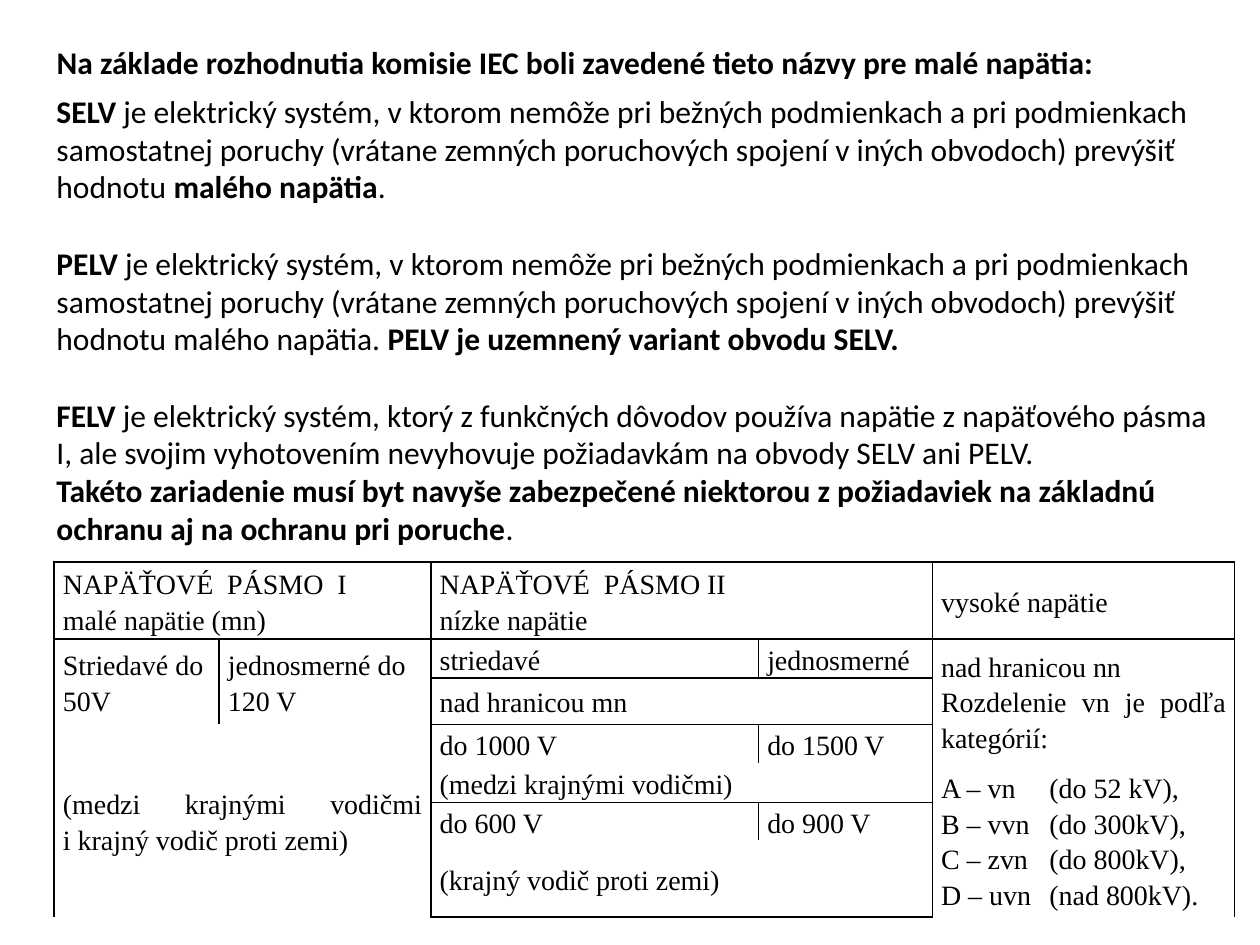
from dataclasses import dataclass

from lxml import etree
from pptx import Presentation
from pptx.dml.color import RGBColor
from pptx.enum.text import MSO_ANCHOR, MSO_AUTO_SIZE, PP_ALIGN
from pptx.oxml.ns import qn
from pptx.util import Inches, Pt

TOP, MIDDLE = MSO_ANCHOR.TOP, MSO_ANCHOR.MIDDLE
LEFT, JUSTIFY = PP_ALIGN.LEFT, PP_ALIGN.JUSTIFY
NO_FIT = MSO_AUTO_SIZE.NONE
TITLE_ONLY = 5


@dataclass(frozen=True)
class Theme:
    ink: str = "000000"
    body_font: str = "Calibri"
    table_font: str = "Times New Roman"
    body_size: int = 18
    table_size: int = 16
    border: int = 1


THEME = Theme()

HEADING = "Na základe rozhodnutia komisie IEC boli zavedené tieto názvy pre malé napätia:"
SHARED = (
    "je elektrický systém, v ktorom nemôže pri bežných podmienkach a pri podmienkach "
    "samostatnej poruchy (vrátane zemných poruchových spojení v iných obvodoch) prevýšiť hodnotu "
)
DEFINITIONS = [
    (0, [("SELV ", True), (SHARED, False), ("malého napätia", True), (".", False)]),
    (22, [("PELV ", True), (SHARED + "malého napätia. ", False),
          ("PELV je uzemnený variant obvodu SELV.", True)]),
    (22, [("FELV ", True),
          ("je elektrický systém, ktorý z funkčných dôvodov používa napätie z napäťového pásma I, "
           "ale svojim vyhotovením nevyhovuje požiadavkám na obvody SELV ani PELV.", False)]),
    (0, [("Takéto zariadenie musí byt navyše zabezpečené niektorou z požiadaviek na základnú "
          "ochranu aj na ochranu pri poruche", True), (".", False)]),
]

COLUMN_WIDTHS = [1.31, 1.68, 2.6, 1.38, 2.4]
ROW_HEIGHTS = [0.61, 0.31, 0.37, 0.31, 0.31, 0.3, 0.61]
CATEGORY_TAB = 0.86
CATEGORIES = (
    "A – vn\t(do 52 kV),\nB – vvn\t(do 300kV),\n"
    "C – zvn\t(do 800kV),\nD – uvn\t(nad 800kV)."
)

# row, column, row span, column span, bordered sides, text
CELLS = [
    (0, 0, 1, 2, "LRTB", "NAPÄŤOVÉ  PÁSMO  I\nmalé napätie (mn)"),
    (0, 2, 1, 2, "LRTB", "NAPÄŤOVÉ  PÁSMO II\nnízke napätie"),
    (0, 4, 1, 1, "LRTB", "vysoké napätie"),
    (1, 0, 2, 1, "LRT", "Striedavé do\n50V"),
    (1, 1, 2, 1, "LRT", "jednosmerné do\n120 V"),
    (1, 2, 1, 1, "LRTB", "striedavé"),
    (1, 3, 1, 1, "LRTB", "jednosmerné"),
    (1, 4, 3, 1, "LRT", "nad hranicou nn\nRozdelenie vn je podľa kategórií:"),
    (2, 2, 1, 2, "LRTB", "nad hranicou mn"),
    (3, 0, 4, 2, "LRB", "(medzi krajnými vodičmi i\u00a0krajný vodič proti zemi)"),
    (3, 2, 1, 1, "LRT", "do 1000 V"),
    (3, 3, 1, 1, "LRT", "do 1500 V"),
    (4, 2, 1, 2, "LRB", "(medzi krajnými vodičmi)"),
    (4, 4, 3, 1, "LRB", CATEGORIES),
    (5, 2, 1, 1, "LRT", "do 600 V"),
    (5, 3, 1, 1, "LRT", "do 900 V"),
    (6, 2, 1, 2, "LRB", "(krajný vodič proti zemi)"),
]


def add_span(para, text, *, font, size, bold=False):
    span = para.add_run()
    span.text = text
    span.font.name = font
    span.font.size = Pt(size)
    span.font.bold = bold
    span.font.color.rgb = RGBColor.from_string(THEME.ink)


def fill_frame(frame, paragraphs, *, font, size, align=LEFT, spacing=1.0):
    for index, (gap, spans) in enumerate(paragraphs):
        para = frame.add_paragraph() if index else frame.paragraphs[0]
        para.alignment = align
        para.line_spacing = spacing
        para.space_before = Pt(gap)
        for text, bold in spans:
            add_span(para, text, font=font, size=size, bold=bold)


def place_text(box, position, paragraphs):
    box.left, box.top, box.width, box.height = map(Inches, position)
    frame = box.text_frame
    frame.word_wrap = True
    frame.auto_size = NO_FIT
    frame.vertical_anchor = TOP
    fill_frame(frame, paragraphs, font=THEME.body_font, size=THEME.body_size)


def set_borders(cell, sides):
    properties = cell._tc.get_or_add_tcPr()
    for side in "LRTB":
        line = etree.SubElement(properties, qn(f"a:ln{side}"), w=str(Pt(THEME.border)))
        if side in sides:
            fill = etree.SubElement(line, qn("a:solidFill"))
            etree.SubElement(fill, qn("a:srgbClr"), val=THEME.ink)
        else:
            etree.SubElement(line, qn("a:noFill"))
    cell.fill.background()


def add_tab_stop(para, inches):
    stops = etree.SubElement(para._p.get_or_add_pPr(), qn("a:tabLst"))
    etree.SubElement(stops, qn("a:tab"), pos=str(Inches(inches)), algn="l")


def fill_cell(table, row, column, row_span, column_span, sides, text):
    last_row, last_column = row + row_span - 1, column + column_span - 1
    for r in range(row, last_row + 1):
        for c in range(column, last_column + 1):
            part = table.cell(r, c)
            outer = {"L": c == column, "R": c == last_column, "T": r == row, "B": r == last_row}
            set_borders(part, [side for side in sides if outer[side]])
            part.margin_left = part.margin_right = Inches(0.07)
            part.margin_top = part.margin_bottom = 0
    cell = table.cell(row, column)
    if row_span * column_span > 1:
        cell.merge(table.cell(last_row, last_column))
    cell.vertical_anchor = MIDDLE
    paragraphs = [(0, [(line, False)]) for line in text.split("\n")]
    fill_frame(cell.text_frame, paragraphs, font=THEME.table_font, size=THEME.table_size,
               align=JUSTIFY, spacing=1.15)
    for para in cell.text_frame.paragraphs:
        if "\t" in para.text:
            add_tab_stop(para, CATEGORY_TAB)


def add_voltage_table(page, left, top):
    table = page.shapes.add_table(
        len(ROW_HEIGHTS), len(COLUMN_WIDTHS), Inches(left), Inches(top),
        Inches(sum(COLUMN_WIDTHS)), Inches(sum(ROW_HEIGHTS))).table
    table.first_row = table.horz_banding = False
    for column, width in zip(table.columns, COLUMN_WIDTHS):
        column.width = Inches(width)
    for row, height in zip(table.rows, ROW_HEIGHTS):
        row.height = Inches(height)
    for entry in CELLS:
        fill_cell(table, *entry)


def main():
    deck = Presentation()
    deck.slide_width, deck.slide_height = Inches(10), Inches(7.5)
    page = deck.slides.add_slide(deck.slide_layouts[TITLE_ONLY])
    place_text(page.shapes.title, (0.35, 0.29, 9.45, 0.71), [(0, [(HEADING, True)])])
    definitions = page.shapes.add_textbox(0, 0, 0, 0)
    place_text(definitions, (0.35, 0.68, 9.37, 4.04), DEFINITIONS)
    add_voltage_table(page, 0.43, 4.46)
    deck.save("out.pptx")


if __name__ == "__main__":
    main()
